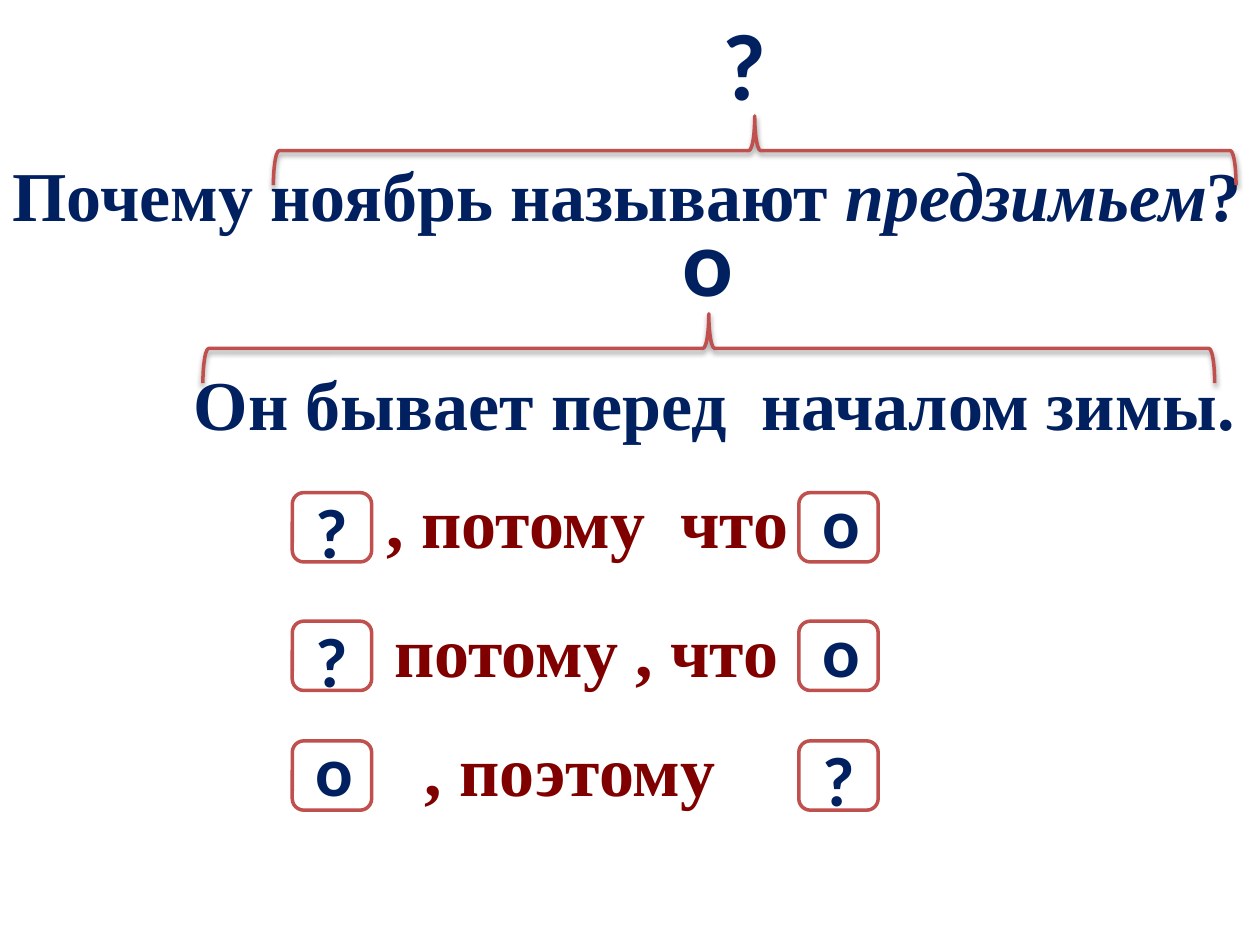
from pptx import Presentation
from pptx.dml.color import RGBColor
from pptx.enum.shapes import MSO_SHAPE
from pptx.enum.text import MSO_ANCHOR, MSO_AUTO_SIZE, PP_ALIGN
from pptx.oxml import parse_xml
from pptx.oxml.ns import nsdecls
from pptx.util import Inches, Pt

THEME = {
    "navy": RGBColor.from_string("002060"),
    "maroon": RGBColor.from_string("800000"),
    "red": RGBColor.from_string("C0504D"),
    "white": RGBColor.from_string("FFFFFF"),
    "serif": "Times New Roman",
    "sans": "Calibri",
    "size": 40,
    "large": 54,
    "line": 2,
}

# Sentences: runs of (text, italic), then left, top, width
QUESTION = ([("Почему ноябрь называют ", False), ("предзимьем", True), ("?", False)],
            0, 1.15, 10.19)
ANSWER = ([("Он бывает перед  началом зимы.", False)], 1.44, 2.81, 8.56)

# Braces as seen on the slide: left, top, width
BRACES = [(2.17, 0.92, 7.64), (1.61, 2.49, 8.03)]
BRACE_DEPTH = 0.55

# Large marks above the braces: text, left, top, width
BRACE_MARKS = [("?", 5.63, 0, 0.56), ("о", 5.31, 1.55, 0.62)]

# Schemes: top of row, left mark, connective, its left and width, right mark
SCHEMES = [
    (3.91, "?", ", потому  что", 2.97, 3.42, "о"),
    (4.93, "?", "потому , что", 3.03, 3.28, "о"),
    (5.88, "о", ", поэтому", 3.27, 2.53, "?"),
]
FRAME_LEFTS = (2.32, 6.34)
FRAME_SIZE = (0.63, 0.55)
MARK_INDENT = 0.08
MARK_WIDTH = {"?": 0.47, "о": 0.51}
MARK_RISE = {"?": 0.08, "о": 0.16}
CONNECTIVE_RISE = 0.16
LINE_HEIGHT = 0.77
LARGE_HEIGHT = 1.01

SHADOW = (
    f'<a:effectLst {nsdecls("a")}><a:outerShdw blurRad="40000" dist="20000" dir="5400000" '
    'rotWithShape="0"><a:srgbClr val="000000"><a:alpha val="38000"/></a:srgbClr>'
    '</a:outerShdw></a:effectLst>'
)


def set_all(target, values):
    for name, value in values.items():
        setattr(target, name, value)


def place(part, left, top, width, height):
    set_all(part, {"left": Inches(left), "top": Inches(top),
                   "width": Inches(width), "height": Inches(height)})


def write(frame, runs, color="navy", face="serif", size="size",
          align=PP_ALIGN.LEFT, spacing=None):
    set_all(frame, {"word_wrap": False, "auto_size": MSO_AUTO_SIZE.SHAPE_TO_FIT_TEXT,
                    "vertical_anchor": MSO_ANCHOR.TOP})
    paragraph = frame.paragraphs[0]
    paragraph.alignment = align
    for text, italic in runs:
        run = paragraph.add_run()
        run.text = text
        set_all(run.font, {"name": THEME[face], "size": Pt(THEME[size]),
                           "bold": True, "italic": italic})
        run.font.color.rgb = THEME[color]
        if spacing:
            run.font._element.set("spc", str(spacing))


def add_text(slide, runs, left, top, width, height=LINE_HEIGHT, **style):
    label = slide.shapes.add_textbox(*map(Inches, (left, top, width, height)))
    write(label.text_frame, runs, **style)


def add_mark(slide, mark, left, top, width, height=LINE_HEIGHT, size="size"):
    add_text(slide, [(mark, False)], left, top, width, height,
             face="sans", size=size, align=PP_ALIGN.CENTER, spacing=50)


def outline(shape):
    shape.shadow.inherit = False
    shape.line.color.rgb = THEME["red"]
    shape.line.width = Pt(THEME["line"])


def add_brace(slide, left, top, width):
    """Turn a left brace so that it spans the given width, point upwards."""
    shift = (width - BRACE_DEPTH) / 2
    brace = slide.shapes.add_shape(
        MSO_SHAPE.LEFT_BRACE,
        *map(Inches, (left + shift, top - shift, BRACE_DEPTH, width)))
    brace.rotation = 90
    brace.fill.background()
    outline(brace)
    properties = brace._element.spPr
    plain = properties.find("{*}effectLst")
    properties.replace(plain, parse_xml(SHADOW))


def add_framed_mark(slide, mark, left, top):
    frame = slide.shapes.add_shape(
        MSO_SHAPE.ROUNDED_RECTANGLE, *map(Inches, (left, top, *FRAME_SIZE)))
    frame.fill.solid()
    frame.fill.fore_color.rgb = THEME["white"]
    outline(frame)
    add_mark(slide, mark, left + MARK_INDENT, top - MARK_RISE[mark], MARK_WIDTH[mark])


def main():
    deck = Presentation()
    set_all(deck, {"slide_width": Inches(10), "slide_height": Inches(7.5)})
    slide = deck.slides.add_slide(deck.slide_layouts[5])

    runs, *question_place = QUESTION
    place(slide.shapes.title, *question_place, LINE_HEIGHT)
    write(slide.shapes.title.text_frame, runs)
    add_text(slide, *ANSWER)

    for brace in BRACES:
        add_brace(slide, *brace)
    for mark in BRACE_MARKS:
        add_mark(slide, *mark, height=LARGE_HEIGHT, size="large")

    for top, first, connective, left, width, second in SCHEMES:
        for mark, frame_left in zip((first, second), FRAME_LEFTS):
            add_framed_mark(slide, mark, frame_left, top)
        add_text(slide, [(connective, False)], left, top - CONNECTIVE_RISE, width,
                 color="maroon")

    deck.save("out.pptx")


if __name__ == "__main__":
    main()
